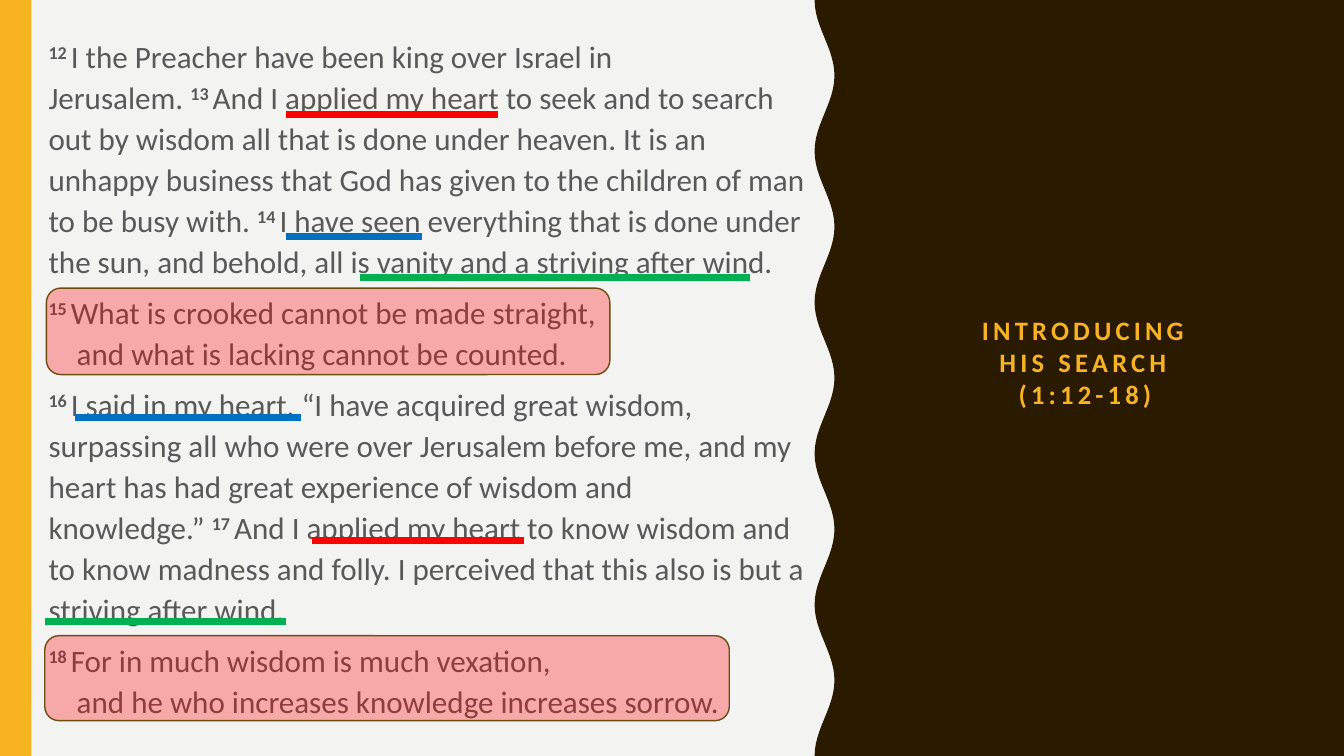
from math import cos, pi

from pptx import Presentation
from pptx.dml.color import RGBColor
from pptx.enum.shapes import MSO_CONNECTOR, MSO_SHAPE
from pptx.enum.text import MSO_ANCHOR, MSO_AUTO_SIZE, PP_ALIGN
from pptx.oxml.ns import qn
from pptx.util import Cm, Pt
from lxml import etree

PAPER = RGBColor(0xF3, 0xF3, 0xF2)
BROWN = RGBColor(0x2A, 0x1A, 0x00)
GOLD = RGBColor(0xF8, 0xB3, 0x23)
GREY = RGBColor(0x59, 0x59, 0x59)
OUTLINE = RGBColor(0x6D, 0x4E, 0x0F)
RED = RGBColor(0xFF, 0x00, 0x00)
BLUE = RGBColor(0x00, 0x70, 0xC0)
GREEN = RGBColor(0x00, 0xB0, 0x50)

WIDTH, HEIGHT = 33.87, 19.05
WAVES, STEPS_PER_WAVE = 5, 24
WAVE_CENTRE, WAVE_DEPTH = 20.78, 0.25
VERSE_INDENT = Cm(0.71)
NO_BREAK_SPACE = chr(160)

TITLE_LINES = ["INTRODUCING", "HIS SEARCH", "(1:12-18)"]

# Each paragraph: its verses (number, lines); poetry hangs its second line.
# A tilde stands for a space where the line must not break.
PROSE, POETRY = False, True
PASSAGE = [
    (PROSE, [
        ("12", ["I~the Preacher have been king over Israel in Jerusalem.~"]),
        ("13", ["And I~applied my heart~to seek and to search out by wisdom all "
                "that is done under heaven. It is an unhappy~business that God "
                "has given to the children of man to be busy with.~"]),
        ("14", ["I have seen everything that is done under the sun, and behold, "
                "all is~vanity~and a striving after wind."]),
    ]),
    (POETRY, [
        ("15", ["What is crooked cannot be made straight,",
                "and what is lacking cannot be counted."]),
    ]),
    (PROSE, [
        ("16", ["I said in my heart, “I have acquired great~wisdom, surpassing "
                "all who were over Jerusalem before me, and my heart has had "
                "great experience of wisdom and knowledge.”~"]),
        ("17", ["And I~applied my heart to know wisdom and to know~madness and "
                "folly. I perceived that this also is but~a striving after "
                "wind."]),
    ]),
    (POETRY, [
        ("18", ["For~in much wisdom is much vexation,",
                "and he who increases knowledge increases sorrow."]),
    ]),
]

# Left, right, height on the slide, colour
UNDERLINES = [
    (7.22, 12.55, 2.89, RED),
    (7.86, 13.2, 13.61, RED),
    (7.22, 10.64, 5.97, BLUE),
    (1.88, 7.58, 10.52, BLUE),
    (9.06, 18.9, 6.99, GREEN),
    (1.14, 7.22, 15.67, GREEN),
]

# Left, top, width, height
HIGHLIGHTS = [(1.17, 7.26, 14.2, 2.18), (1.13, 16.02, 17.25, 2.14)]


def place(shape, left, top, width, height):
    shape.left, shape.top = Cm(left), Cm(top)
    shape.width, shape.height = Cm(width), Cm(height)


def paint_panel(slide, shape, color):
    """Fill a background panel and send it behind the placeholders."""
    shape.shadow.inherit = False
    shape.fill.solid()
    shape.fill.fore_color.rgb = color
    shape.line.fill.background()
    slide.shapes._spTree.insert(2, shape._element)


def add_wavy_panel(slide):
    steps = WAVES * STEPS_PER_WAVE
    edge = [(Cm(WAVE_CENTRE - WAVE_DEPTH * cos(2 * pi * step / STEPS_PER_WAVE)),
             Cm(HEIGHT * step / steps)) for step in range(steps + 1)]
    builder = slide.shapes.build_freeform(Cm(WIDTH), 0)
    builder.add_line_segments([(Cm(WIDTH), Cm(HEIGHT))] + edge[::-1])
    paint_panel(slide, builder.convert_to_shape(), BROWN)


def add_side_bar(slide):
    bar = slide.shapes.add_shape(MSO_SHAPE.RECTANGLE, 0, 0, Cm(0.79), Cm(HEIGHT))
    paint_panel(slide, bar, GOLD)


def prepare_frame(shape):
    frame = shape.text_frame
    frame.word_wrap = True
    frame.auto_size = MSO_AUTO_SIZE.NONE
    frame.vertical_anchor = MSO_ANCHOR.MIDDLE
    return frame


def set_font(paragraph, size, color):
    paragraph.font.name = "Calibri"
    paragraph.font.size = Pt(size)
    paragraph.font.color.rgb = color


def add_text(paragraph, text):
    run = paragraph.add_run()
    run.text = text.replace("~", NO_BREAK_SPACE)
    return run


def add_lines(paragraph, lines):
    """Add one run per line, with line breaks between them."""
    runs = []
    for index, line in enumerate(lines):
        if index:
            paragraph.add_line_break()
        runs.append(add_text(paragraph, line))
    return runs


def fill_title(title):
    place(title, 22.94, 6.71, 8.81, 4.83)
    paragraph = prepare_frame(title).paragraphs[0]
    paragraph.alignment = PP_ALIGN.CENTER
    for run in add_lines(paragraph, TITLE_LINES):
        run._r.get_or_add_rPr().set("spc", "300")
    set_font(paragraph, 19, GOLD)
    paragraph.font.bold = True


def add_verse(paragraph, number, lines):
    number_run = add_text(paragraph, number + "~")
    number_run.font.bold = True
    number_run.font._element.set("baseline", "30000")
    add_lines(paragraph, lines)


def fill_passage(body):
    place(body, 0.97, 0.76, 19.79, 17.48)
    frame = prepare_frame(body)
    for index, (is_poetry, verses) in enumerate(PASSAGE):
        paragraph = frame.add_paragraph() if index else frame.paragraphs[0]
        indent = VERSE_INDENT if is_poetry else 0
        properties = paragraph._p.get_or_add_pPr()
        properties.set("marL", str(indent))
        properties.set("indent", str(-indent))
        paragraph.line_spacing = 1.1
        paragraph.space_before = Pt(7 if index else 0)
        etree.SubElement(properties, qn("a:buNone"))
        set_font(paragraph, 22.2, GREY)
        for number, lines in verses:
            add_verse(paragraph, number, lines)


def add_underline(slide, left, right, top, color):
    line = slide.shapes.add_connector(
        MSO_CONNECTOR.STRAIGHT, Cm(left), Cm(top), Cm(right), Cm(top))
    line.line.color.rgb = color
    line.line.width = Pt(5)
    etree.SubElement(line._element.spPr, qn("a:effectLst"))


def add_highlight(slide, left, top, width, height):
    box = slide.shapes.add_shape(
        MSO_SHAPE.ROUNDED_RECTANGLE, Cm(left), Cm(top), Cm(width), Cm(height))
    box.shadow.inherit = False
    box.fill.solid()
    box.fill.fore_color.rgb = RED
    color = box._element.spPr.find(qn("a:solidFill"))[0]
    etree.SubElement(color, qn("a:alpha"), val="30000")
    box.line.color.rgb = OUTLINE
    box.line.width = Pt(1)


def main():
    presentation = Presentation()
    presentation.slide_width, presentation.slide_height = Cm(WIDTH), Cm(HEIGHT)
    slide = presentation.slides.add_slide(presentation.slide_layouts[1])
    slide.background.fill.solid()
    slide.background.fill.fore_color.rgb = PAPER

    # Background panels
    add_side_bar(slide)
    add_wavy_panel(slide)

    # Title and passage
    fill_title(slide.shapes.title)
    fill_passage(slide.placeholders[1])

    # Marks over the passage
    for underline in UNDERLINES:
        add_underline(slide, *underline)
    for highlight in HIGHLIGHTS:
        add_highlight(slide, *highlight)

    presentation.save("out.pptx")


if __name__ == "__main__":
    main()
